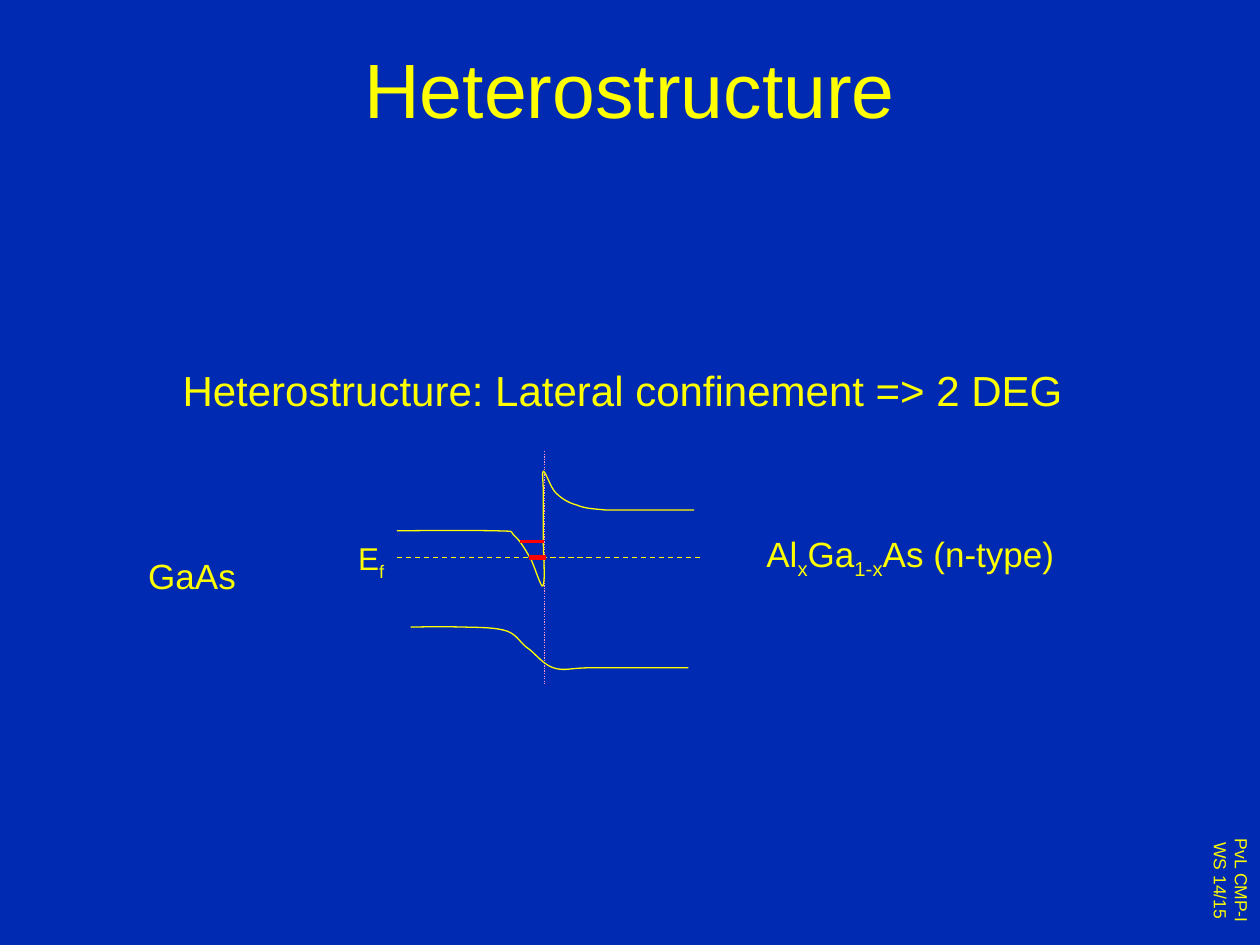
from lxml import etree
from pptx import Presentation
from pptx.dml.color import RGBColor
from pptx.enum.dml import MSO_LINE
from pptx.enum.shapes import MSO_CONNECTOR
from pptx.enum.text import MSO_ANCHOR, MSO_AUTO_SIZE, PP_ALIGN
from pptx.oxml.ns import qn
from pptx.util import Pt

LEFT, CENTER = PP_ALIGN.LEFT, PP_ALIGN.CENTER
TOP, MIDDLE = MSO_ANCHOR.TOP, MSO_ANCHOR.MIDDLE
GROW, FIXED = MSO_AUTO_SIZE.SHAPE_TO_FIT_TEXT, MSO_AUTO_SIZE.NONE
DASH, DOT = MSO_LINE.DASH, MSO_LINE.ROUND_DOT
STRAIGHT = MSO_CONNECTOR.STRAIGHT

THEME = {
    "font": "Arial",
    "background": RGBColor(0x00, 0x2A, 0xB2),
    "main": RGBColor(0xFF, 0xFF, 0x00),
    "interface": RGBColor(0xFF, 0x99, 0xCC),
    "level": RGBColor(0xFF, 0x00, 0x00),
    "title": 44, "heading": 24, "material": 20, "energy": 18, "footer": 10,
}
SUBSCRIPT = "-25000"

# Text: paragraphs of runs (a run in a tuple is a subscript), box in points, format
FOOTER = ([["PvL CMP-I"], ["WS 14/15"]], (680.4, 475.2, 38.9, 56.2),
          dict(size="footer", align=CENTER, vertical=True))
TITLE = ([["Heterostructure"]], (54, 5, 612, 90),
         dict(size="title", align=CENTER, anchor=MIDDLE, wrap=True))
HEADING = ([["Heterostructure: Lateral confinement => 2 DEG"]],
           (97.2, 204.5, 517.7, 36), dict(size="heading"))
FERMI_LABEL = ([["E", ("f",)]], (197.3, 304.6, 29.5, 28.8),
               dict(size="energy", align=CENTER))
MATERIALS = [
    ([["Al", ("x",), "Ga", ("1-x",), "As (n-type)"]],
     (430.8, 301, 181.4, 31), dict(size="material")),
    ([["GaAs"]], (77.6, 313.2, 64.8, 31), dict(size="material")),
]

# Lines: start, end, colour, width, dash
INTERFACE = ((311, 257.8), (311, 391), "interface", 0.75, DOT)
FERMI_LEVEL = ((226.8, 318.4), (401, 318.4), "main", 0.75, DASH)
BOUND_LEVELS = [
    ((302.4, 318.6), (311.8, 318.6), "level", 3, None),
    ((297.4, 309.6), (311, 309.6), "level", 1.5, None),
]

# Band edges: start point, then (control, control, end) for each Bézier segment
CONDUCTION_BAND = ((226.8, 303.4), [
    ((249.8, 303.1), (272.9, 303.1), (284.4, 303.4)),
    ((295.2, 303.8), (290.9, 303.1), (293.8, 306)),
    ((297.4, 308.9), (301, 315.4), (303.8, 320.4)),
    ((306, 325.4), (309.6, 337), (310.3, 334.8)),
    ((311.8, 332.6), (310.5, 316.8), (310.5, 308.2)),
    ((310.5, 299.5), (310.5, 288), (310.5, 281.5)),
    ((310.5, 275), (309.6, 269.3), (310.5, 269.3)),
    ((311.8, 269.3), (314.6, 278.6), (317.5, 281.5)),
    ((321.1, 285.1), (324.7, 287.3), (329.8, 288.7)),
    ((334.8, 290.9), (341.3, 290.9), (346.3, 291.5)),
    ((351.4, 291.5), (355, 291.5), (360.7, 291.5)),
    ((366.5, 291.5), (376.6, 291.5), (382.3, 291.5)),
    ((388.1, 291.5), (393.8, 291.5), (396.7, 291.5)),
])
VALENCE_BAND = ((234.7, 358.4), [
    ((245.5, 358.1), (257, 358.1), (266.4, 358.4)),
    ((275, 358.6), (283.7, 358.6), (289.8, 360.7)),
    ((295.9, 362.9), (297.4, 367.9), (302.4, 371)),
    ((306.7, 374.4), (311, 380.2), (316.8, 381.8)),
    ((323.3, 383.6), (325.4, 381.6), (338.4, 381.6)),
    ((351.4, 381.6), (372.2, 381.6), (393.3, 381.6)),
])


def add_text(slide, paragraphs, box, *, size, align=LEFT, anchor=TOP,
             wrap=False, vertical=False):
    shape = slide.shapes.add_textbox(*map(Pt, box))
    frame = shape.text_frame
    frame.word_wrap = wrap
    frame.auto_size = FIXED if wrap else GROW
    frame.vertical_anchor = anchor
    if vertical:
        frame._txBody.bodyPr.set("vert", "vert")
    for index, runs in enumerate(paragraphs):
        paragraph = frame.add_paragraph() if index else frame.paragraphs[0]
        paragraph.alignment = align
        for content in runs:
            is_subscript = isinstance(content, tuple)
            run = paragraph.add_run()
            run.text = content[0] if is_subscript else content
            run.font.name = THEME["font"]
            run.font.size = Pt(THEME[size])
            run.font.color.rgb = THEME["main"]
            if is_subscript:
                run.font._element.set("baseline", SUBSCRIPT)


def style_line(line, color, width, dash=None):
    line.color.rgb = THEME[color]
    line.width = Pt(width)
    if dash:
        line.dash_style = dash


def add_line(slide, start, end, color, width, dash):
    connector = slide.shapes.add_connector(STRAIGHT, *map(Pt, start + end))
    style_line(connector.line, color, width, dash)
    etree.SubElement(connector._element.spPr, qn("a:effectLst"))


def add_band(slide, start, segments):
    """Draw a band edge: each three line vertices become one cubic Bézier."""
    points = [tuple(map(Pt, point)) for segment in segments for point in segment]
    builder = slide.shapes.build_freeform(*map(Pt, start))
    builder.add_line_segments(points, close=False)
    shape = builder.convert_to_shape()
    outline = next(shape._element.iter(qn("a:path")))
    vertices = outline.findall(qn("a:lnTo"))
    for first in range(0, len(vertices), 3):
        curve = etree.SubElement(outline, qn("a:cubicBezTo"))
        for vertex in vertices[first:first + 3]:
            curve.append(vertex[0])
            outline.remove(vertex)
    shape.shadow.inherit = False
    shape.fill.background()
    style_line(shape.line, "main", 0.75)


def main():
    presentation = Presentation()
    presentation.slide_width, presentation.slide_height = Pt(720), Pt(540)
    slide = presentation.slides.add_slide(presentation.slide_layouts[6])
    slide.background.fill.solid()
    slide.background.fill.fore_color.rgb = THEME["background"]

    def add_texts(*texts):
        for paragraphs, box, text_format in texts:
            add_text(slide, paragraphs, box, **text_format)

    add_texts(FOOTER, TITLE)
    add_line(slide, *INTERFACE)
    add_texts(HEADING)
    for band in (CONDUCTION_BAND, VALENCE_BAND):
        add_band(slide, *band)
    add_line(slide, *FERMI_LEVEL)
    add_texts(FERMI_LABEL)
    for level in BOUND_LEVELS:
        add_line(slide, *level)
    add_texts(*MATERIALS)
    presentation.save("out.pptx")


if __name__ == "__main__":
    main()
